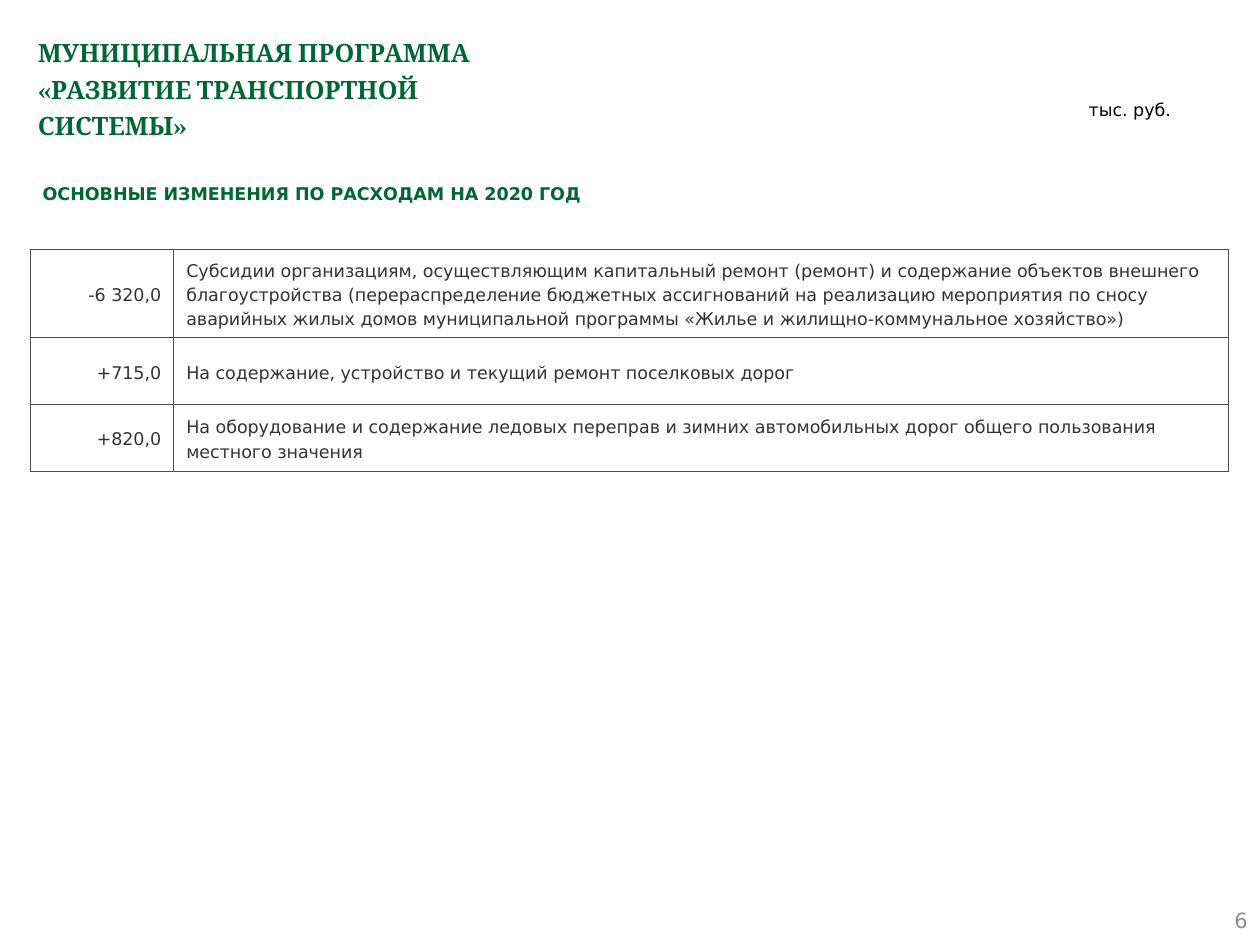
from lxml import etree
from pptx import Presentation
from pptx.dml.color import RGBColor
from pptx.enum.shapes import MSO_SHAPE
from pptx.enum.text import MSO_ANCHOR, MSO_AUTO_SIZE, PP_ALIGN
from pptx.oxml.ns import qn
from pptx.util import Pt

LEFT, RIGHT = PP_ALIGN.LEFT, PP_ALIGN.RIGHT
TOP, MIDDLE = MSO_ANCHOR.TOP, MSO_ANCHOR.MIDDLE
NO_AUTOFIT, GROW = MSO_AUTO_SIZE.NONE, MSO_AUTO_SIZE.SHAPE_TO_FIT_TEXT
HOME_PLATE = MSO_SHAPE.PENTAGON

COLORS = {
    "heading": "006633",
    "body": "333333",
    "unit": "000000",
    "page": "8C8C8C",
    "border": "4D4D4D",
}
BODY_FONT = "DejaVu Sans"
TITLE_FONT = "Cambria"

TITLE_LINES = ["МУНИЦИПАЛЬНАЯ ПРОГРАММА", "«РАЗВИТИЕ ТРАНСПОРТНОЙ", "СИСТЕМЫ»"]
CHANGES = [
    ("-6 320,0",
     "Субсидии организациям, осуществляющим капитальный ремонт (ремонт) и содержание "
     "объектов внешнего благоустройства (перераспределение бюджетных ассигнований на "
     "реализацию мероприятия по сносу аварийных жилых домов муниципальной программы "
     "«Жилье и жилищно-коммунальное хозяйство»)"),
    ("+715,0", "На содержание, устройство и текущий ремонт поселковых дорог"),
    ("+820,0",
     "На оборудование и содержание ледовых переправ и зимних автомобильных дорог "
     "общего пользования местного значения"),
]


def write(frame, text, color, size=10, font=BODY_FONT, bold=False, align=LEFT, spacing=None):
    """Fill a text frame with one paragraph and format it."""
    frame.word_wrap = True
    frame.text = text
    paragraph = frame.paragraphs[0]
    paragraph.alignment = align
    paragraph.line_spacing = spacing
    for run in paragraph.runs:
        run.font.name = font
        run.font.size = Pt(size)
        run.font.bold = bold
        run.font.color.rgb = RGBColor.from_string(COLORS[color])


def add_title(slide, left, top, width, height):
    """Place the programme title in the title placeholder."""
    title = slide.shapes.title
    title.left, title.top, title.width, title.height = map(Pt, (left, top, width, height))
    frame = title.text_frame
    frame.vertical_anchor = TOP
    frame.auto_size = NO_AUTOFIT
    write(frame, "\v".join(TITLE_LINES), "heading", 14.4, TITLE_FONT, True, spacing=1.2)


def add_label(slide, box, text, color, anchor=TOP, auto_size=NO_AUTOFIT, **style):
    """Place a short text box."""
    frame = slide.shapes.add_textbox(*map(Pt, box)).text_frame
    frame.vertical_anchor = anchor
    write(frame, text, color, **style)
    frame.auto_size = auto_size


def add_section_heading(slide, left, top, width, height):
    """Place the section heading in an unfilled plate."""
    heading = slide.shapes.add_shape(HOME_PLATE, Pt(left), Pt(top), Pt(width), Pt(height))
    heading.adjustments[0] = 0
    heading.shadow.inherit = False
    heading.fill.background()
    heading.line.fill.background()
    heading.text_frame.vertical_anchor = MIDDLE
    write(heading.text_frame, "ОСНОВНЫЕ ИЗМЕНЕНИЯ ПО РАСХОДАМ НА 2020 ГОД", "heading", bold=True)


def add_borders(cell, width=1):
    """Draw a solid line on each side of a cell."""
    properties = cell._tc.get_or_add_tcPr()
    for position, side in enumerate(("a:lnL", "a:lnR", "a:lnT", "a:lnB")):
        line = etree.Element(qn(side), w=str(Pt(width)))
        fill = etree.SubElement(line, qn("a:solidFill"))
        etree.SubElement(fill, qn("a:srgbClr"), val=COLORS["border"])
        properties.insert(position, line)


def add_changes_table(slide, left, top, width, row_height, amount_width):
    """Place the table of spending changes."""
    table = slide.shapes.add_table(
        len(CHANGES), 2, Pt(left), Pt(top), Pt(width), Pt(row_height * len(CHANGES))
    ).table
    table.first_row = table.horz_banding = False
    table.columns[0].width = Pt(amount_width)
    table.columns[1].width = Pt(width - amount_width)
    for row, change in zip(table.rows, CHANGES):
        row.height = Pt(row_height)
        for cell, text, align in zip(row.cells, change, (RIGHT, LEFT)):
            cell.fill.background()
            cell.vertical_anchor = MIDDLE
            write(cell.text_frame, text, "body", align=align, spacing=1.2)
            add_borders(cell)


def main():
    """Build and save the slide."""
    deck = Presentation()
    deck.slide_width, deck.slide_height = Pt(720), Pt(540)
    slide = deck.slides.add_slide(deck.slide_layouts[5])
    add_title(slide, 14.4, 14.4, 692, 57)
    add_label(slide, (552, 511, 168, 29), "6", "page", MIDDLE, size=12, align=RIGHT)
    add_label(slide, (615, 50.4, 72.7, 21.6), "тыс. руб.", "unit", auto_size=GROW, spacing=1.2)
    add_section_heading(slide, 17.3, 95, 383, 31)
    add_changes_table(slide, 17.3, 142.5, 684.7, 38.2, 82)
    deck.save("out.pptx")


if __name__ == "__main__":
    main()
